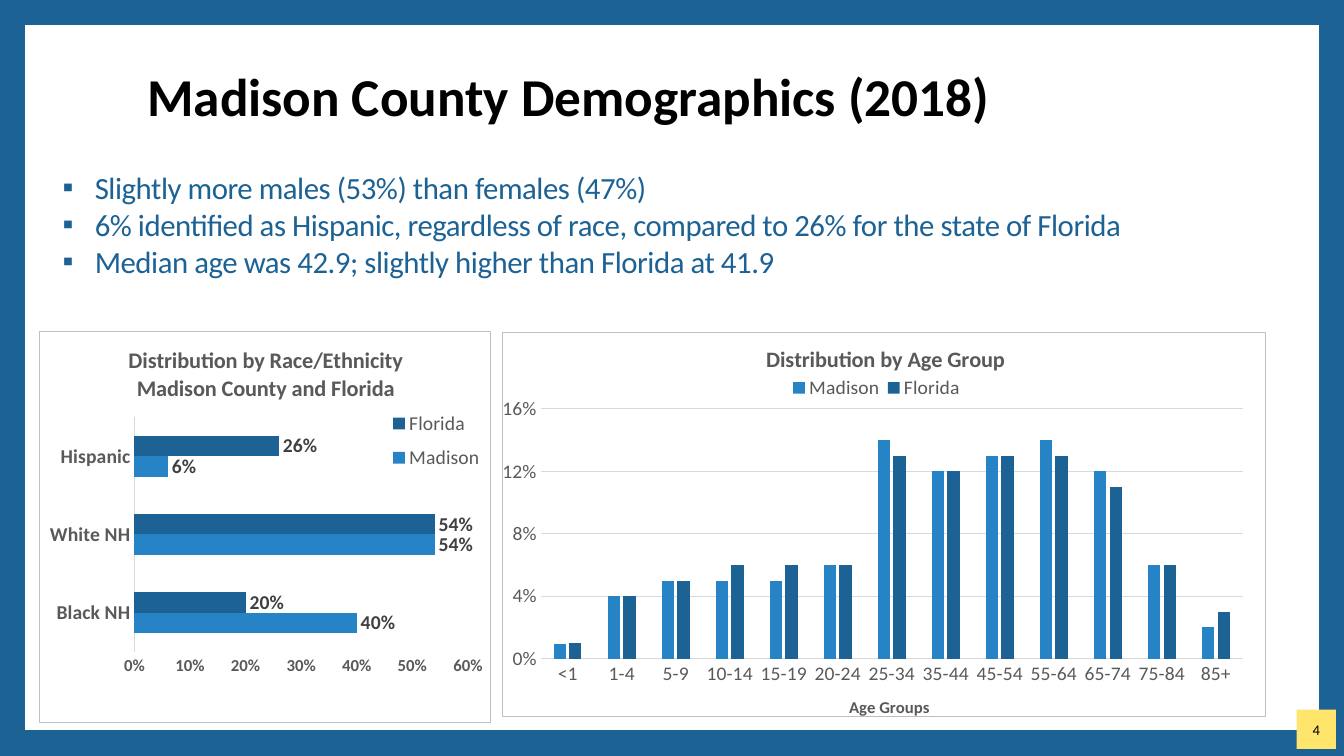
from dataclasses import dataclass

from pptx import Presentation
from pptx.chart.data import CategoryChartData
from pptx.dml.color import RGBColor
from pptx.enum.chart import XL_CHART_TYPE as ChartType, XL_LABEL_POSITION as LabelPosition
from pptx.enum.chart import XL_LEGEND_POSITION as LegendPosition, XL_TICK_MARK as TickMark
from pptx.enum.shapes import MSO_SHAPE as Preset
from pptx.enum.text import MSO_ANCHOR as Anchor, MSO_AUTO_SIZE as AutoSize, PP_ALIGN as Align
from pptx.oxml import parse_xml
from pptx.oxml.ns import nsdecls, qn
from pptx.util import Inches, Pt


@dataclass(frozen=True)
class Theme:
    font: str = "Calibri"
    navy: str = "1C6294"
    blue: str = "2683C6"
    yellow: str = "FFE56B"
    black: str = "000000"
    label: str = "404040"
    gray: str = "595959"
    grid: str = "D9D9D9"
    border: str = "BFBFBF"
    title_size: float = 38
    body_size: float = 22
    chart_title_size: float = 16
    chart_size: float = 14
    small_size: float = 12
    number_size: float = 10.5


THEME = Theme()


@dataclass(frozen=True)
class Box:
    left: float
    top: float
    width: float
    height: float

    def lengths(self) -> list:
        return [Inches(n) for n in (self.left, self.top, self.width, self.height)]


@dataclass(frozen=True)
class DemographicChart:
    """Layout boxes and points are fractions of the chart's size."""
    kind: ChartType
    box: Box
    title: str
    title_at: tuple
    plot: Box
    legend: Box
    categories: list
    madison: list
    florida: list
    maximum: float
    step: float
    gap: int
    overlap: int = 0
    axis_title: str = ""
    axis_title_at: tuple = (0, 0)
    value_size: float = THEME.chart_size
    bold_axes: bool = False
    gridlines: bool = False
    value_labels: bool = False


BULLETS = [
    "Slightly more males (53%) than females (47%)",
    "6% identified as Hispanic, regardless of race, compared to 26% for the state of Florida",
    "Median age was 42.9; slightly higher than Florida at 41.9",
]

CHARTS = [
    DemographicChart(
        ChartType.COLUMN_CLUSTERED, Box(4.98, 3.29, 7.58, 3.88),
        "Distribution by Age Group", (0.34, 0.02),
        Box(0.05, 0.2, 0.92, 0.65), Box(0.37, 0.11, 0.24, 0.07),
        ["<1", "1-4", "5-9", "10-14", "15-19", "20-24", "25-34",
         "35-44", "45-54", "55-64", "65-74", "75-84", "85+"],
        [0.009, 0.04, 0.05, 0.05, 0.05, 0.06, 0.14, 0.12, 0.13, 0.14, 0.12, 0.06, 0.02],
        [0.01, 0.04, 0.05, 0.06, 0.06, 0.06, 0.13, 0.12, 0.13, 0.13, 0.11, 0.06, 0.03],
        maximum=0.16, step=0.04, gap=219, overlap=-27,
        axis_title="Age Groups", axis_title_at=(0.45, 0.94), gridlines=True),
    DemographicChart(
        ChartType.BAR_CLUSTERED, Box(0.39, 3.28, 4.48, 3.89),
        "Distribution by Race/Ethnicity\nMadison County and Florida", (0.19, 0.03),
        Box(0.21, 0.22, 0.74, 0.6), Box(0.77, 0.18, 0.22, 0.2),
        ["Black NH", "White NH", "Hispanic"],
        [0.4, 0.54, 0.06], [0.2, 0.54, 0.26],
        maximum=0.6, step=0.1, gap=182, value_size=THEME.small_size,
        bold_axes=True, value_labels=True),
]


def style_font(font, size: float, color: str, bold: bool = False) -> None:
    font.name = THEME.font
    font.size = Pt(size)
    font.bold = bold
    font.color.rgb = RGBColor.from_string(color)


def style_line(line, color: str, width: float) -> None:
    line.color.rgb = RGBColor.from_string(color)
    line.width = Pt(width)


def place_part(element, left: float, top: float, width: float = 0, height: float = 0,
               inner: bool = False) -> None:
    """Give a chart part a manual layout in fractions of the chart."""
    for old in element.findall(qn("c:layout")):
        element.remove(old)
    settings = [("layoutTarget", "inner")] if inner else []
    settings += [("xMode", "edge"), ("yMode", "edge"), ("x", left), ("y", top)]
    if width:
        settings += [("w", width), ("h", height)]
    body = "".join(f'<c:{name} val="{value}"/>' for name, value in settings)
    layout = parse_xml(f'<c:layout {nsdecls("c")}><c:manualLayout>{body}</c:manualLayout></c:layout>')
    before = [child for child in element if child.tag in (qn("c:tx"), qn("c:legendPos"))]
    if before:
        before[-1].addnext(layout)
    else:
        element.insert(0, layout)


def write_chart_title(title, text: str, at: tuple, size: float) -> None:
    title.text_frame.text = text
    for paragraph in title.text_frame.paragraphs:
        style_font(paragraph.font, size, THEME.gray, True)
    place_part(title._element, *at)


def style_axes(chart, design: DemographicChart) -> None:
    category, value = chart.category_axis, chart.value_axis
    for axis, size in ((category, THEME.chart_size), (value, design.value_size)):
        axis.major_tick_mark = axis.minor_tick_mark = TickMark.NONE
        style_font(axis.tick_labels.font, size, THEME.gray, design.bold_axes)
    style_line(category.format.line, THEME.grid, 0.75)
    value.format.line.fill.background()
    value.minimum_scale, value.maximum_scale = 0, design.maximum
    value.major_unit = design.step
    value.tick_labels.number_format = "0%"
    value.tick_labels.number_format_is_linked = False
    value.has_major_gridlines = design.gridlines
    if design.gridlines:
        style_line(value.major_gridlines.format.line, THEME.grid, 0.75)
    if design.axis_title:
        write_chart_title(category.axis_title, design.axis_title,
                          design.axis_title_at, THEME.small_size)


def style_series(plot, design: DemographicChart) -> None:
    plot.vary_by_categories = False
    plot.gap_width, plot.overlap = design.gap, design.overlap
    for series, color in zip(plot.series, (THEME.blue, THEME.navy)):
        series.format.fill.solid()
        series.format.fill.fore_color.rgb = RGBColor.from_string(color)
        if design.value_labels:
            labels = series.data_labels
            labels.show_value = True
            labels.position = LabelPosition.OUTSIDE_END
            labels.number_format = "0%"
            labels.number_format_is_linked = False
            style_font(labels.font, THEME.chart_size, THEME.label, True)


def add_demographic_chart(slide, design: DemographicChart) -> None:
    data = CategoryChartData(number_format="0%")
    data.categories = design.categories
    data.add_series("Madison", design.madison)
    data.add_series("Florida", design.florida)
    chart = slide.shapes.add_chart(design.kind, *design.box.lengths(), data).chart
    style_font(chart.font, 10, THEME.black)
    chart._chartSpace.find(qn("c:txPr")).addprevious(parse_xml(
        f'<c:spPr {nsdecls("c", "a")}><a:noFill/><a:ln w="{Pt(0.75)}"><a:solidFill>'
        f'<a:srgbClr val="{THEME.border}"/></a:solidFill></a:ln></c:spPr>'))
    chart.has_title = True
    write_chart_title(chart.chart_title, design.title, design.title_at, THEME.chart_title_size)
    chart.has_legend = True
    chart.legend.position = LegendPosition.BOTTOM
    chart.legend.include_in_layout = False
    style_font(chart.legend.font, THEME.chart_size, THEME.gray)
    style_axes(chart, design)
    style_series(chart.plots[0], design)
    for element, box, inner in ((chart.legend._element, design.legend, False),
                                (chart._chartSpace.chart.plotArea, design.plot, True)):
        place_part(element, box.left, box.top, box.width, box.height, inner)


def move(shape, box: Box) -> None:
    shape.left, shape.top, shape.width, shape.height = box.lengths()


def add_rectangle(slide, box: Box):
    shape = slide.shapes.add_shape(Preset.RECTANGLE, *box.lengths())
    shape.shadow.inherit = False
    return shape


def add_frame_and_number(slide) -> None:
    frame = add_rectangle(slide, Box(0.12, 0.12, 13.09, 7.25))
    frame.fill.background()
    style_line(frame.line, THEME.navy, 19)
    frame.line._ln.append(parse_xml(f'<a:miter {nsdecls("a")} lim="800000"/>'))
    badge = add_rectangle(slide, Box(12.86, 7.04, 0.39, 0.39))
    badge.fill.solid()
    badge.fill.fore_color.rgb = RGBColor.from_string(THEME.yellow)
    badge.line.fill.background()
    text_frame = badge.text_frame
    text_frame.margin_left = text_frame.margin_right = 0
    text_frame.vertical_anchor = Anchor.MIDDLE
    paragraph = text_frame.paragraphs[0]
    paragraph.text = "4"
    paragraph.alignment = Align.CENTER
    style_font(paragraph.font, THEME.number_size, THEME.black)


def write_title(title) -> None:
    move(title, Box(1.36, 0.46, 11.5, 1.05))
    title.text_frame.text = "Madison County Demographics (2018)"
    title.text_frame.auto_size = AutoSize.NONE
    title.text_frame.vertical_anchor = Anchor.MIDDLE
    paragraph = title.text_frame.paragraphs[0]
    paragraph.alignment = Align.LEFT
    paragraph.line_spacing = 0.9
    style_font(paragraph.font, THEME.title_size, THEME.black, True)


def write_bullets(body) -> None:
    move(body, Box(0.47, 1.62, 12.58, 1.26))
    body.text_frame.text = "\n".join(BULLETS)
    body.text_frame.auto_size = AutoSize.NONE
    for paragraph in body.text_frame.paragraphs:
        paragraph.space_before = Pt(0)
        properties = paragraph._p.get_or_add_pPr()
        properties.set("marL", str(Inches(0.37)))
        properties.set("indent", str(Inches(-0.32)))
        for bullet in (f'<a:buClr {nsdecls("a")}><a:srgbClr val="{THEME.navy}"/></a:buClr>',
                       f'<a:buChar {nsdecls("a")} char="▪"/>'):
            properties.append(parse_xml(bullet))
        style_font(paragraph.font, THEME.body_size, THEME.navy)
        properties.find(qn("a:defRPr")).set("spc", "-30")


def main() -> None:
    presentation = Presentation()
    presentation.slide_width, presentation.slide_height = Inches(13.33), Inches(7.5)
    slide = presentation.slides.add_slide(presentation.slide_layouts[1])
    add_frame_and_number(slide)
    write_title(slide.shapes.title)
    write_bullets(slide.placeholders[1])
    for design in CHARTS:
        add_demographic_chart(slide, design)
    presentation.save("out.pptx")


if __name__ == "__main__":
    main()
